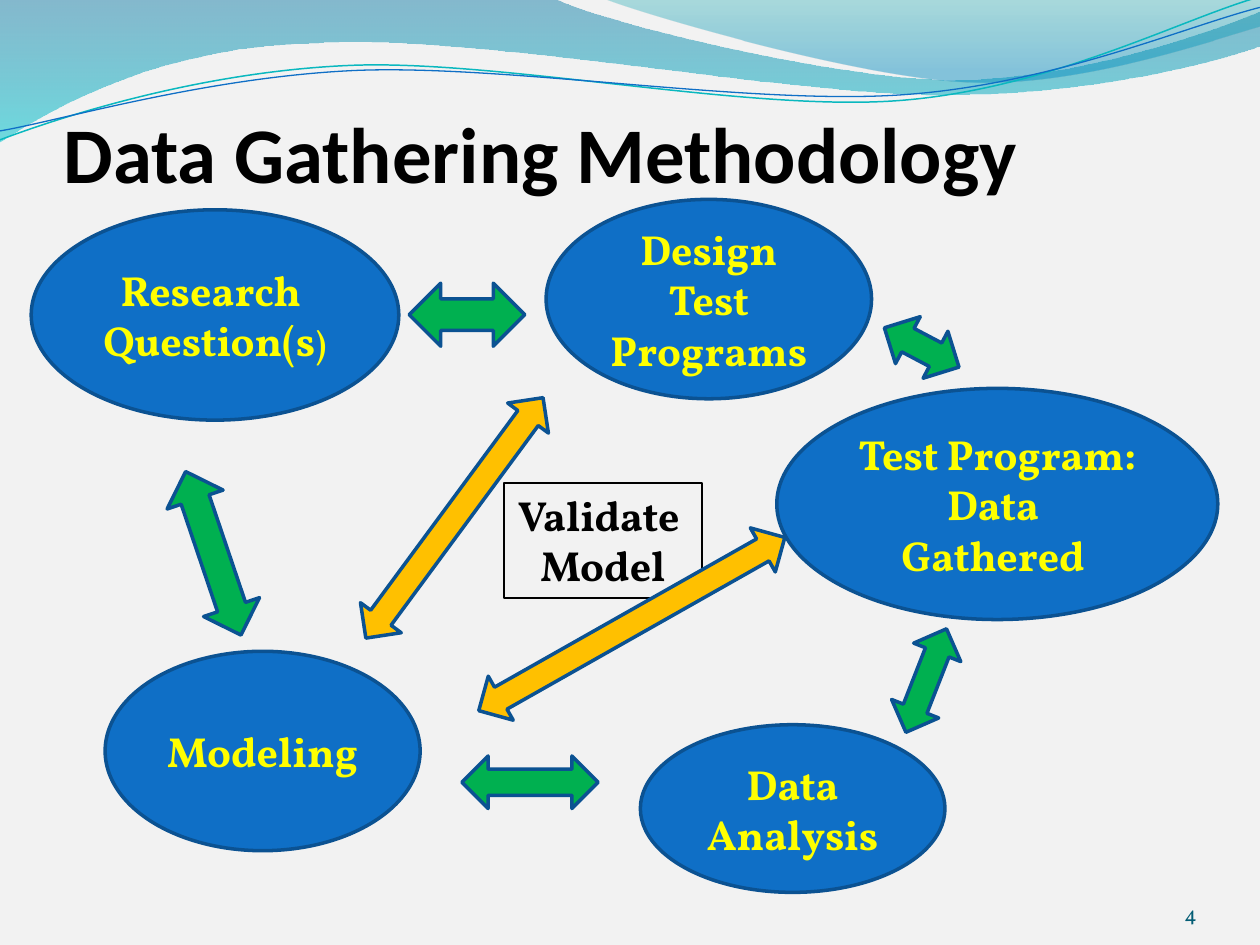
from dataclasses import dataclass

from lxml import etree
from pptx import Presentation
from pptx.dml.color import RGBColor
from pptx.enum.shapes import MSO_SHAPE
from pptx.enum.text import MSO_ANCHOR, PP_ALIGN
from pptx.oxml.ns import qn
from pptx.util import Cm, Pt

ELLIPSE, ARROW, RECT = MSO_SHAPE.OVAL, MSO_SHAPE.LEFT_RIGHT_ARROW, MSO_SHAPE.RECTANGLE
LEFT, CENTER, RIGHT = PP_ALIGN.LEFT, PP_ALIGN.CENTER, PP_ALIGN.RIGHT
TOP, MIDDLE, BOTTOM = MSO_ANCHOR.TOP, MSO_ANCHOR.MIDDLE, MSO_ANCHOR.BOTTOM


@dataclass(frozen=True)
class Theme:
    background: str = "F2F2F2"
    blue: str = "0F6FC6"
    outline: str = "0B5292"
    teal: str = "0AB8BF"
    green: str = "00B050"
    amber: str = "FFC000"
    yellow: str = "FFFF00"
    black: str = "000000"
    number: str = "045D75"
    heading_font: str = "Calibri"
    body_font: str = "Vollkorn"
    title_size: float = 45
    body_size: float = 24
    small_size: float = 20
    number_size: float = 12


THEME = Theme()

# Each wave is a start point and segments: one point is a line, three a cubic curve.
# Gradient stops are position, colour and opacity in percent.
BANDS = [
    ((0, 0), [
        [(11.18, -0.03)],
        [(12.09, 0.43), (16.87, 1.6), (19.25, 1.6)],
        [(21.67, 1.6), (24.33, 0.66), (25.4, 0.23)],
        [(25.43, 0.91)],
        [(24.97, 1.12), (22.1, 1.93), (18.95, 1.91)],
        [(15.8, 1.91), (9.7, 0.71), (6.53, 0.86)],
        [(3.25, 0.91), (1.17, 2.11), (-0.03, 2.87)],
        [(0, 0)],
    ], [(0, "0074A1", 45), (1, "00C6CF", 55)]),
    ((12.17, -0.03), [
        [(12.93, 0.28), (17.32, 1.57), (19.53, 1.65)],
        [(21.74, 1.75), (24.41, 0.81), (25.4, 0.53)],
        [(25.4, 0)],
        [(12.17, -0.03)],
    ], [(0, "00A1A9", 30), (0.8, "008BBF", 45)]),
]
STRANDS = [
    ((0, 2.82), [
        [(1.22, 2.36), (4.01, 1.45), (7.04, 1.32)],
        [(10.03, 1.19), (15.06, 2.26), (18.11, 2.03)],
        [(21.16, 1.8), (23.83, 0.38), (25.35, -0.05)],
    ], THEME.teal, 0.85),
    ((0, 2.64), [
        [(1.19, 2.44), (4.17, 1.55), (7.19, 1.42)],
        [(10.24, 1.3), (15.16, 2.13), (18.21, 1.91)],
        [(21.23, 1.7), (23.9, 0.53), (25.4, 0.15)],
    ], THEME.blue, 0.75),
]

# Boxes are left, top, width, height in cm, relative to the diagram.
STEPS = [
    ((15.66, 3.82, 8.89, 4.66), ["Test Program:", "Data  Gathered "]),
    ((12.91, 10.6, 6.14, 3.38), ["Data Analysis"]),
    ((0.63, 0.22, 7.41, 4.24), ["Research ", "Question(s"]),
    ((2.12, 9.12, 6.35, 4.02), ["Modeling"]),
    ((11.01, 0.01, 6.56, 4.02), ["Design Test Programs"]),
]
ARROWS = [
    ((17.73, 2.46, 1.7, 1.07), 27.8, THEME.green),
    ((17.55, 9.2, 2.24, 1.02), 111.4, THEME.green),
    ((9.31, 11.23, 2.75, 1.06), 0, THEME.green),
    ((2.56, 6.55, 3.48, 1.19), 71.3, THEME.green),
    ((8.25, 1.7, 2.33, 1.27), 0, THEME.green),
    ((6.15, 5.92, 6.02, 1.02), 126.4, THEME.amber),
    ((9.19, 8.06, 7.09, 1.02), 150.5, THEME.amber),
]


def rgb(color):
    return RGBColor.from_string(color)


def style_run(r, size, color, font=THEME.body_font, bold=True):
    for name, value in {"name": font, "size": Pt(size), "bold": bold}.items():
        setattr(r.font, name, value)
    r.font.color.rgb = rgb(color)


def write(sp, lines, size, color, align=CENTER, anchor=MIDDLE, margins=None, **font):
    tf = sp.text_frame
    settings = {"word_wrap": True, "vertical_anchor": anchor, **(margins or {})}
    for name, value in settings.items():
        setattr(tf, name, value)
    tf.text = "\n".join(lines)
    for p in tf.paragraphs:
        p.alignment = align
        for r in p.runs:
            style_run(r, size, color, **font)
    return tf


def add_block(slide, kind, box, fill, line, width, rotation=0):
    sp = slide.shapes.add_shape(kind, *map(Cm, box))
    sp.shadow.inherit = False
    sp.rotation = rotation
    if fill:
        sp.fill.solid()
        sp.fill.fore_color.rgb = rgb(fill)
    else:
        sp.fill.background()
    sp.line.color.rgb = rgb(line)
    sp.line.width = Pt(width)
    return sp


def add_wave(slide, start, segments, close):
    """Build the outline through every point, then join each three into a curve."""
    points = [(Cm(x), Cm(y)) for segment in segments for x, y in segment]
    builder = slide.shapes.build_freeform(*map(Cm, start))
    builder.add_line_segments(points, close=close)
    sp = builder.convert_to_shape()
    sp.shadow.inherit = False
    lines = iter(list(sp.element.iter(qn("a:lnTo"))))
    for segment in segments:
        steps = [next(lines) for _ in segment]
        if len(steps) == 3:
            curve = etree.Element(qn("a:cubicBezTo"))
            steps[0].addprevious(curve)
            for step in steps:
                curve.append(step[0])
                step.getparent().remove(step)
    return sp


def add_header_waves(slide):
    for start, segments, stops in BANDS:
        sp = add_wave(slide, start, segments, True)
        sp.line.fill.background()
        sp.fill.gradient()
        sp.fill.gradient_angle = 270
        for stop, (position, color, _) in zip(sp.fill.gradient_stops, stops):
            stop.position = position
            stop.color.rgb = rgb(color)
        for node, (_, _, opacity) in zip(sp.element.spPr.iter(qn("a:srgbClr")), stops):
            etree.SubElement(node, qn("a:alpha"), val=str(opacity * 1000))
    for start, segments, color, width in STRANDS:
        sp = add_wave(slide, start, segments, False)
        sp.fill.background()
        sp.line.color.rgb = rgb(color)
        sp.line.width = Pt(width)


def add_label(slide, box, text, size, color, align, top=0, **font):
    margins = {"margin_left": 0, "margin_right": 0, "margin_top": Cm(top), "margin_bottom": 0}
    write(slide.shapes.add_textbox(*map(Cm, box)), [text], size, color,
          align, BOTTOM, margins, **font)


def add_diagram(slide, top):
    def place(box):
        x, y, w, h = box
        return x, y + top, w, h

    for box, lines in STEPS:
        sp = add_block(slide, ELLIPSE, place(box), THEME.blue, THEME.outline, 2)
        tf = write(sp, lines, THEME.body_size, THEME.yellow)
        if lines[-1] == "Question(s":
            r = tf.paragraphs[-1].add_run()
            r.text = ")"
            style_run(r, THEME.small_size, THEME.yellow)
    sp = add_block(slide, RECT, place((10.16, 5.73, 3.99, 2.31)), None, THEME.black, 1.25)
    write(sp, ["Validate ", "Model"], THEME.body_size, THEME.black, anchor=TOP)
    for box, rotation, color in ARROWS:
        add_block(slide, ARROW, place(box), color, THEME.outline, 2, rotation)


def main():
    prs = Presentation()
    prs.slide_width, prs.slide_height = Cm(25.4), Cm(19.05)
    slide = prs.slides.add_slide(prs.slide_layouts[6])
    slide.background.fill.solid()
    slide.background.fill.fore_color.rgb = rgb(THEME.background)
    add_header_waves(slide)
    add_label(slide, (1.28, 1.96, 22.86, 2.06), "Data Gathering Methodology",
              THEME.title_size, THEME.black, LEFT, 0.13, font=THEME.heading_font)
    add_label(slide, (22.02, 17.65, 2.11, 1.02), "4",
              THEME.number_size, THEME.number, RIGHT, bold=False)
    add_diagram(slide, 4.01)
    prs.save("out.pptx")


if __name__ == "__main__":
    main()
